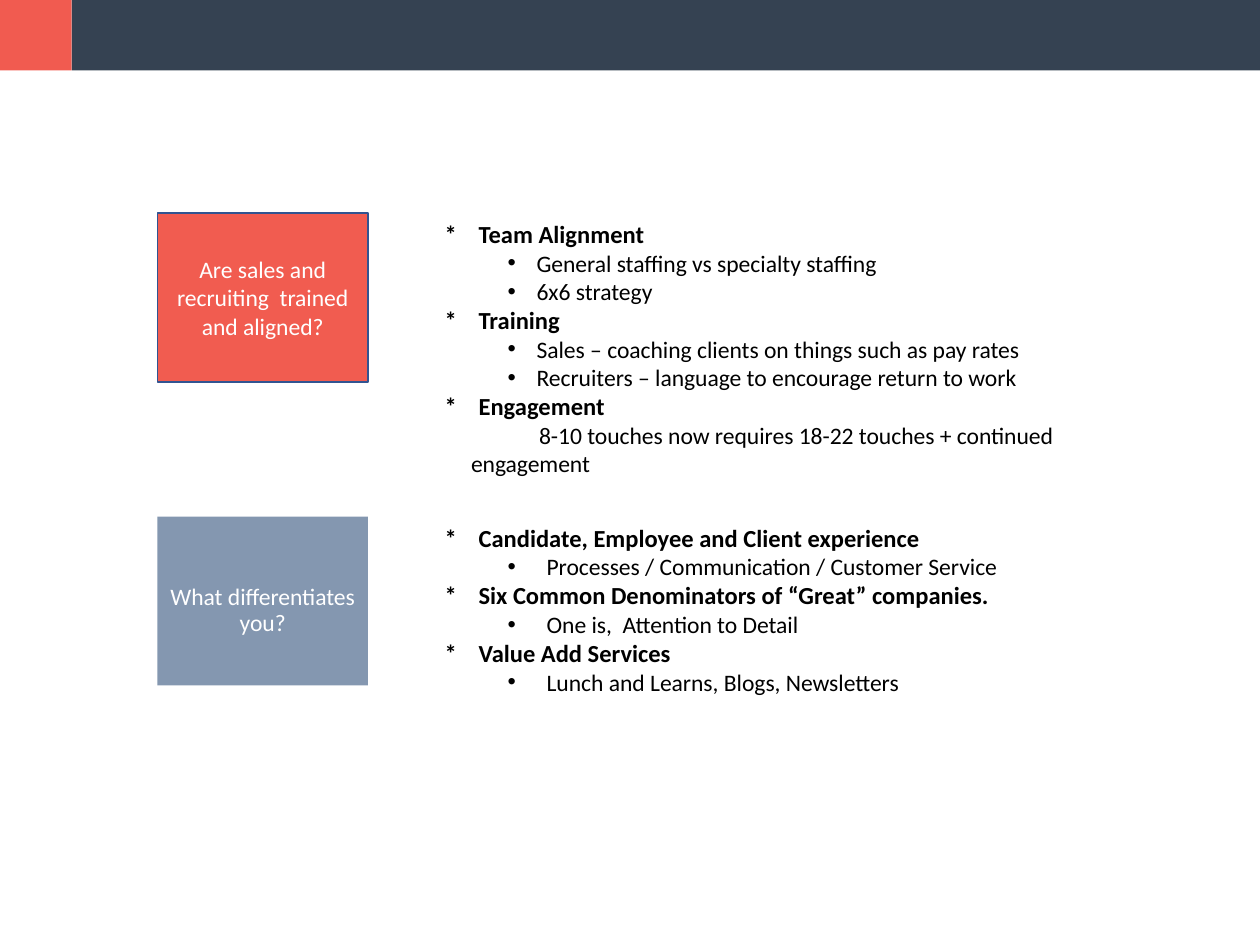
"""Build the slide on aligning sales and recruiting and on standing out."""
from dataclasses import dataclass

from lxml.etree import SubElement
from pptx import Presentation
from pptx.dml.color import RGBColor
from pptx.enum.shapes import MSO_SHAPE
from pptx.enum.text import MSO_ANCHOR, PP_ALIGN
from pptx.oxml.ns import qn
from pptx.util import Inches, Pt


@dataclass(frozen=True)
class Theme:
    font: str = "Calibri"
    heading_size: float = 14
    body_size: float = 13.5
    coral: str = "F15B50"
    question_coral: str = "F15C50"
    navy: str = "354252"
    slate: str = "8497B0"
    outline: str = "325491"
    light: str = "FFFFFF"
    dark: str = "000000"


def write_text(paragraph, text, *, font, size, color, bold=False, align=PP_ALIGN.LEFT,
               line_spacing=None, margin=0, indent=0, bullet=None):
    properties = paragraph._p.get_or_add_pPr()
    properties.set("marL", str(Inches(margin)))
    properties.set("indent", str(Inches(indent)))
    if bullet:
        SubElement(properties, qn("a:buFont"), typeface="Arial")
        SubElement(properties, qn("a:buChar"), char=bullet)
    paragraph.alignment = align
    if line_spacing:
        paragraph.line_spacing = line_spacing
    run = paragraph.add_run()
    run.text = text
    run.font.name = font
    run.font.size = Pt(size)
    run.font.bold = bold
    run.font.color.rgb = RGBColor.from_string(color)


class SlideBuilder:
    def __init__(self, slide, theme):
        self.slide = slide
        self.theme = theme

    def block(self, left, top, width, height, fill, outline=None):
        block = self.slide.shapes.add_shape(
            MSO_SHAPE.RECTANGLE, Inches(left), Inches(top), Inches(width), Inches(height))
        block.shadow.inherit = False
        block.fill.solid()
        block.fill.fore_color.rgb = RGBColor.from_string(fill)
        if outline:
            block.line.color.rgb = RGBColor.from_string(outline)
            block.line.width = Pt(1)
        else:
            block.line.fill.background()
        return block

    def question(self, top, text, fill, outline=None, line_spacing=None, top_inset=0.05):
        frame = self.block(1.25, top, 1.67, 1.34, fill, outline).text_frame
        frame.word_wrap = True
        frame.vertical_anchor = MSO_ANCHOR.MIDDLE
        frame.margin_left = frame.margin_right = Inches(0.05)
        frame.margin_top = Inches(top_inset)
        write_text(frame.paragraphs[0], text, font=self.theme.font,
                   size=self.theme.body_size, color=self.theme.light,
                   align=PP_ALIGN.CENTER, line_spacing=line_spacing)

    def answers(self, top, height, entries, styles):
        frame = self.slide.shapes.add_textbox(
            Inches(3.43), Inches(top), Inches(5.32), Inches(height)).text_frame
        frame.word_wrap = True
        for position, (kind, text) in enumerate(entries):
            paragraph = frame.add_paragraph() if position else frame.paragraphs[0]
            write_text(paragraph, text, font=self.theme.font,
                       color=self.theme.dark, **styles[kind])


def main():
    theme = Theme()
    presentation = Presentation()
    presentation.slide_width, presentation.slide_height = Inches(10), Inches(7.5)
    slide = presentation.slides.add_slide(presentation.slide_layouts[6])
    builder = SlideBuilder(slide, theme)

    builder.block(0, 0, 0.57, 0.56, theme.coral)
    builder.block(0.57, 0, 9.43, 0.56, theme.navy)

    heading = dict(size=theme.heading_size, bold=True, margin=0.27, indent=-0.27)
    alignment_styles = {
        "heading": heading,
        "point": dict(size=theme.body_size, margin=0.73, indent=-0.23, bullet="•"),
        "detail": dict(size=theme.body_size, margin=0.21, indent=0.54),
    }
    difference_styles = {
        "heading": heading,
        "point": dict(size=theme.body_size, margin=0.81, indent=-0.31, bullet="•"),
    }

    alignment_top, difference_top = 1.69, 4.1
    builder.question(difference_top, "What differentiates you?", theme.slate,
                     line_spacing=0.9, top_inset=0.21)
    builder.question(alignment_top, "Are sales and recruiting  trained and aligned?",
                     theme.question_coral, outline=theme.outline)
    builder.answers(alignment_top, 2.85, [
        ("heading", "*\tTeam Alignment"),
        ("point", "General staffing vs specialty staffing"),
        ("point", "6x6 strategy"),
        ("heading", "*\tTraining"),
        ("point", "Sales – coaching clients on things such as pay rates"),
        ("point", "Recruiters – language to encourage return to work"),
        ("heading", "*\tEngagement"),
        ("detail", "8-10 touches now requires 18-22 touches + continued engagement"),
    ], alignment_styles)
    builder.answers(difference_top, 2.17, [
        ("heading", "*\tCandidate, Employee and Client experience"),
        ("point", "Processes / Communication / Customer Service"),
        ("heading", "*\tSix Common Denominators of “Great” companies."),
        ("point", "One is,  Attention to Detail"),
        ("heading", "*\tValue Add Services"),
        ("point", "Lunch and Learns, Blogs, Newsletters"),
    ], difference_styles)

    presentation.save("out.pptx")


if __name__ == "__main__":
    main()
